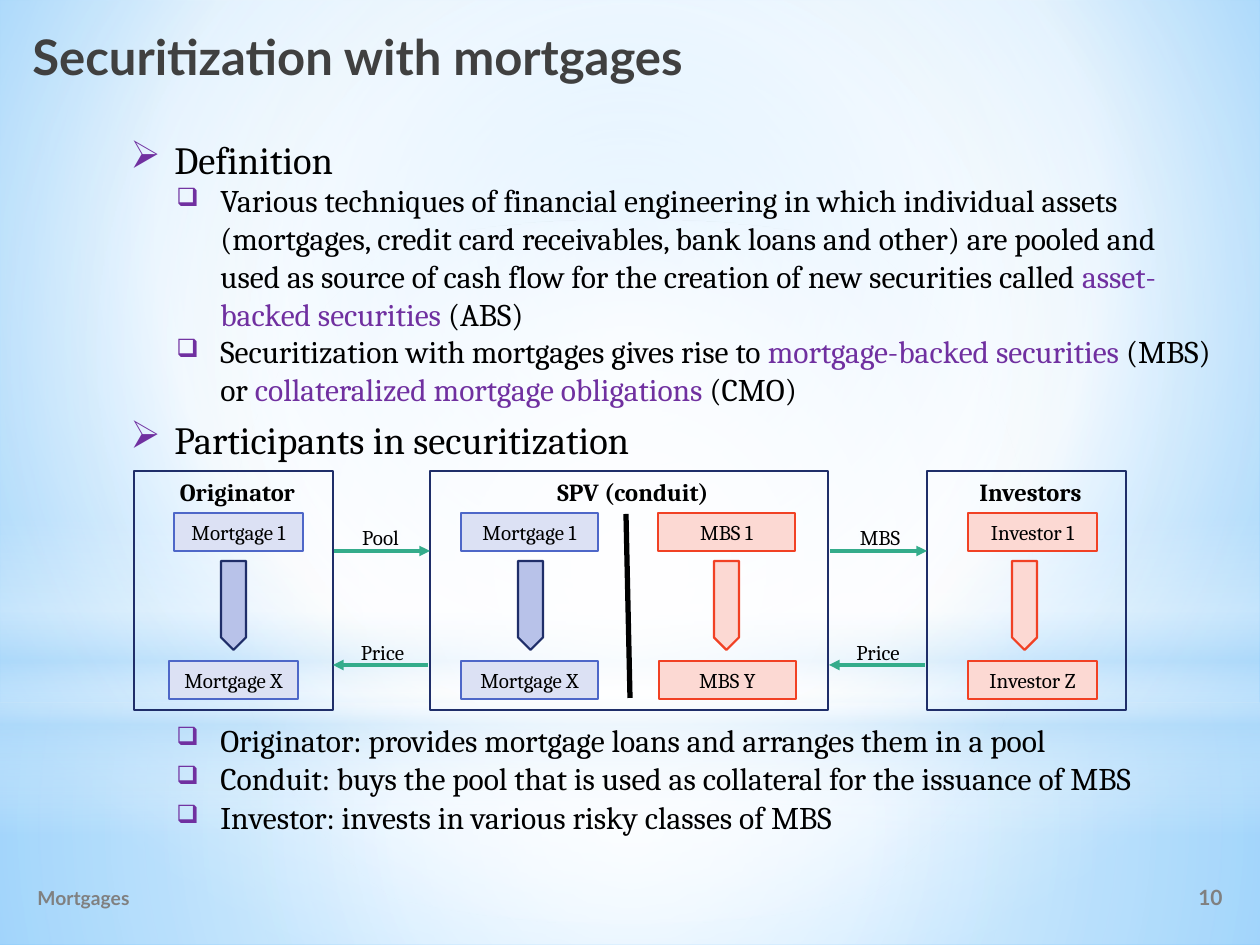
import pptx
import pptx.util
from lxml import etree
from pptx.dml.color import RGBColor
from pptx.enum.shapes import MSO_CONNECTOR, MSO_SHAPE
from pptx.enum.text import MSO_ANCHOR, PP_ALIGN
from pptx.oxml.ns import qn

PX = 914400 / 126
BLACK = RGBColor(0x00, 0x00, 0x00)
TITLE_GRAY = RGBColor(0x40, 0x40, 0x40)
FOOTER_GRAY = RGBColor(0x80, 0x80, 0x80)
PURPLE = RGBColor(0x70, 0x30, 0xA0)
NAVY = RGBColor(0x1F, 0x2E, 0x69)
BLUE = RGBColor(0x4E, 0x67, 0xC8)
PALE_BLUE = RGBColor(0xDC, 0xE1, 0xF4)
MID_BLUE = RGBColor(0xB8, 0xC2, 0xE9)
RED = RGBColor(0xF1, 0x41, 0x24)
PALE_RED = RGBColor(0xFC, 0xD9, 0xD3)
GREEN = RGBColor(0x34, 0xAC, 0x8B)
WHITE = RGBColor(0xFF, 0xFF, 0xFF)
SKY = RGBColor(0xB4, 0xDC, 0xFA)
BACKGROUND_CENTER = RGBColor(0x9E, 0xD5, 0xFF)
BACKGROUND_EDGE = RGBColor(0x5B, 0xB9, 0xFF)


def set_gradient(fill, element, stops, focus):
    fill.gradient()
    gradient = element.find(".//" + qn("a:gradFill"))
    for child in list(gradient):
        gradient.remove(child)
    stop_list = etree.SubElement(gradient, qn("a:gsLst"))
    for position, color, opacity in stops:
        stop = etree.SubElement(stop_list, qn("a:gs"), pos=str(position * 1000))
        solid = etree.SubElement(stop, qn("a:srgbClr"), val=str(color))
        if opacity < 100:
            etree.SubElement(solid, qn("a:alpha"), val=str(opacity * 1000))
    if focus is None:
        etree.SubElement(gradient, qn("a:lin"), ang="5400000", scaled="0")
    else:
        circle = etree.SubElement(gradient, qn("a:path"), path="circle")
        sides = {side: str(value * 1000) for side, value in zip("ltrb", focus)}
        etree.SubElement(circle, qn("a:fillToRect"), **sides)


def write_text(shape, runs, size, color=BLACK, font="Cambria", bold=False,
               align=PP_ALIGN.CENTER, anchor=MSO_ANCHOR.TOP, wrap=False, bullet=None):
    frame = shape.text_frame
    frame.word_wrap = wrap
    frame.vertical_anchor = anchor
    paragraph = frame.paragraphs[0]
    paragraph.alignment = align
    if bullet:
        character, percent = bullet
        properties = paragraph._p.get_or_add_pPr()
        indent = round(44 * PX)
        properties.set("marL", str(indent))
        properties.set("indent", str(-indent))
        bullet_color = etree.SubElement(properties, qn("a:buClr"))
        etree.SubElement(bullet_color, qn("a:srgbClr"), val=str(PURPLE))
        etree.SubElement(properties, qn("a:buSzPct"), val=str(percent * 1000))
        etree.SubElement(properties, qn("a:buChar"), char=character)
    paragraph.font.name = font
    paragraph.font.size = pptx.util.Pt(size)
    paragraph.font.bold = bold
    if len(runs) == 1:
        paragraph.font.color.rgb = color
    for index, text in enumerate(runs):
        run = paragraph.add_run()
        run.text = text
        if len(runs) > 1:
            run.font.color.rgb = PURPLE if index % 2 else color


presentation = pptx.Presentation()
presentation.slide_width = pptx.util.Inches(10)
presentation.slide_height = pptx.util.Inches(7.5)
slide = presentation.slides.add_slide(presentation.slide_layouts[6])
shapes = slide.shapes

set_gradient(slide.background.fill, slide.element,
             [(0, BACKGROUND_CENTER, 100), (60, WHITE, 100), (100, BACKGROUND_EDGE, 100)],
             (20, 10, 20, 60))

center = (50, 50, 50, 50)
glows = [
    (MSO_SHAPE.RECTANGLE, 703, 242, [(0, WHITE, 91), (37, WHITE, 76), (100, SKY, 79)], center),
    (MSO_SHAPE.RECTANGLE, 0, 703, [(0, WHITE, 89), (48, WHITE, 62), (100, SKY, 79)], center),
    (MSO_SHAPE.RECTANGLE, 519, 315, [(0, WHITE, 0), (29, WHITE, 30), (45, SKY, 40),
                                     (55, WHITE, 26), (65, SKY, 60), (100, WHITE, 0)], None),
    (MSO_SHAPE.OVAL, 220, 703, [(0, WHITE, 100), (56, WHITE, 0)], center),
]
for kind, top, height, stops, focus in glows:
    glow = shapes.add_shape(kind, 0, round(top * PX), presentation.slide_width, round(height * PX))
    glow.shadow.inherit = False
    glow.line.fill.background()
    set_gradient(glow.fill, glow.element, stops, focus)

headings = [
    ("Securitization with mortgages", 20, 20, 740, 89, 28, TITLE_GRAY, PP_ALIGN.LEFT, MSO_ANCHOR.TOP),
    ("Mortgages", 25, 873, 456, 49, 11, FOOTER_GRAY, PP_ALIGN.LEFT, MSO_ANCHOR.MIDDLE),
    ("10", 987, 873, 248, 49, 12, FOOTER_GRAY, PP_ALIGN.RIGHT, MSO_ANCHOR.MIDDLE),
]
for text, left, top, width, height, size, color, align, anchor in headings:
    box = shapes.add_textbox(*[round(value * PX) for value in (left, top, width, height)])
    write_text(box, [text], size, color, "Lato", True, align, anchor, wrap=True)

for text, top in [("Definition", 130), ("Participants in securitization", 410)]:
    box = shapes.add_textbox(*[round(value * PX) for value in (118, top, 607, 59)])
    write_text(box, [text], 22, align=PP_ALIGN.LEFT, wrap=True, bullet=("➢", 100))

details = [
    (175, 1032, 165, ["Various techniques of financial engineering in which individual assets "
                      "(mortgages, credit card receivables, bank loans and other) are pooled and "
                      "used as source of cash flow for the creation of new securities called ",
                      "asset-backed securities ", "(ABS)"]),
    (326, 1076, 89, ["Securitization with mortgages gives rise to ", "mortgage-backed securities ",
                     "(MBS) or ", "collateralized mortgage obligations ", "(CMO)"]),
    (715, 1062, 50, ["Originator: provides mortgage loans and arranges them in a pool"]),
    (753, 1062, 50, ["Conduit: buys the pool that is used as collateral for the issuance of MBS"]),
    (792, 1062, 50, ["Investor: invests in various risky classes of MBS"]),
]
for top, width, height, runs in details:
    box = shapes.add_textbox(*[round(value * PX) for value in (164, top, width, height)])
    write_text(box, runs, 18, align=PP_ALIGN.LEFT, wrap=True, bullet=("❑", 80))

for title, left, width in [("Originator", 134, 199), ("SPV (conduit)", 430, 398), ("Investors", 927, 199)]:
    panel = shapes.add_shape(MSO_SHAPE.RECTANGLE,
                             *[round(value * PX) for value in (left, 471, width, 239)])
    panel.shadow.inherit = False
    panel.fill.background()
    panel.line.color.rgb = NAVY
    panel.line.width = pptx.util.Pt(1.5)
    label = shapes.add_textbox(*[round(value * PX) for value in (left + 4, 471, width, 43)])
    write_text(label, [title], 14, bold=True)

mortgage_colors = (PALE_BLUE, BLUE, MID_BLUE, NAVY)
investor_colors = (PALE_RED, RED, PALE_RED, RED)
stacks = [
    ("Mortgage 1", "Mortgage X", 174, 169, 129, 189, mortgage_colors),
    ("Mortgage 1", "Mortgage X", 461, 461, 137, 486, mortgage_colors),
    ("MBS 1", "MBS Y", 658, 659, 137, 682, investor_colors),
    ("Investor 1", "Investor Z", 968, 968, 129, 980, investor_colors),
]
for first, last, first_left, last_left, width, arrow_left, colors in stacks:
    box_fill, box_line, arrow_fill, arrow_line = colors
    for text, left, top in [(first, first_left, 513), (last, last_left, 661)]:
        box = shapes.add_shape(MSO_SHAPE.RECTANGLE,
                               *[round(value * PX) for value in (left, top, width, 38)])
        box.shadow.inherit = False
        box.fill.solid()
        box.fill.fore_color.rgb = box_fill
        box.line.color.rgb = box_line
        box.line.width = pptx.util.Pt(1)
        write_text(box, [text], 12)
    arrow = shapes.add_shape(MSO_SHAPE.PENTAGON,
                             *[round(value * PX) for value in (arrow_left, 593, 89, 25)])
    arrow.rotation = 90
    arrow.shadow.inherit = False
    arrow.fill.solid()
    arrow.fill.fore_color.rgb = arrow_fill
    arrow.line.color.rgb = arrow_line
    arrow.line.width = pptx.util.Pt(1.25)

lines = [
    (626, 514, 630, 698, BLACK, 3, False),
    (334, 551, 430, 551, GREEN, 2, True),
    (830, 551, 927, 551, GREEN, 2, True),
    (428, 665, 333, 665, GREEN, 2, True),
    (925, 665, 829, 665, GREEN, 2, True),
]
for start_x, start_y, end_x, end_y, color, width, has_arrowhead in lines:
    line = shapes.add_connector(MSO_CONNECTOR.STRAIGHT,
                                *[round(value * PX) for value in (start_x, start_y, end_x, end_y)])
    line.line.color.rgb = color
    line.line.width = pptx.util.Pt(width)
    if has_arrowhead:
        etree.SubElement(line.line._get_or_add_ln(), qn("a:tailEnd"), type="triangle")
    etree.SubElement(line.element.spPr, qn("a:effectLst"))

for text, left, top, width in [("Pool", 346, 518, 69), ("MBS", 832, 518, 96),
                               ("Price", 341, 633, 83), ("Price", 830, 633, 96)]:
    label = shapes.add_textbox(*[round(value * PX) for value in (left, top, width, 38)])
    write_text(label, [text], 12)

presentation.save("out.pptx")
